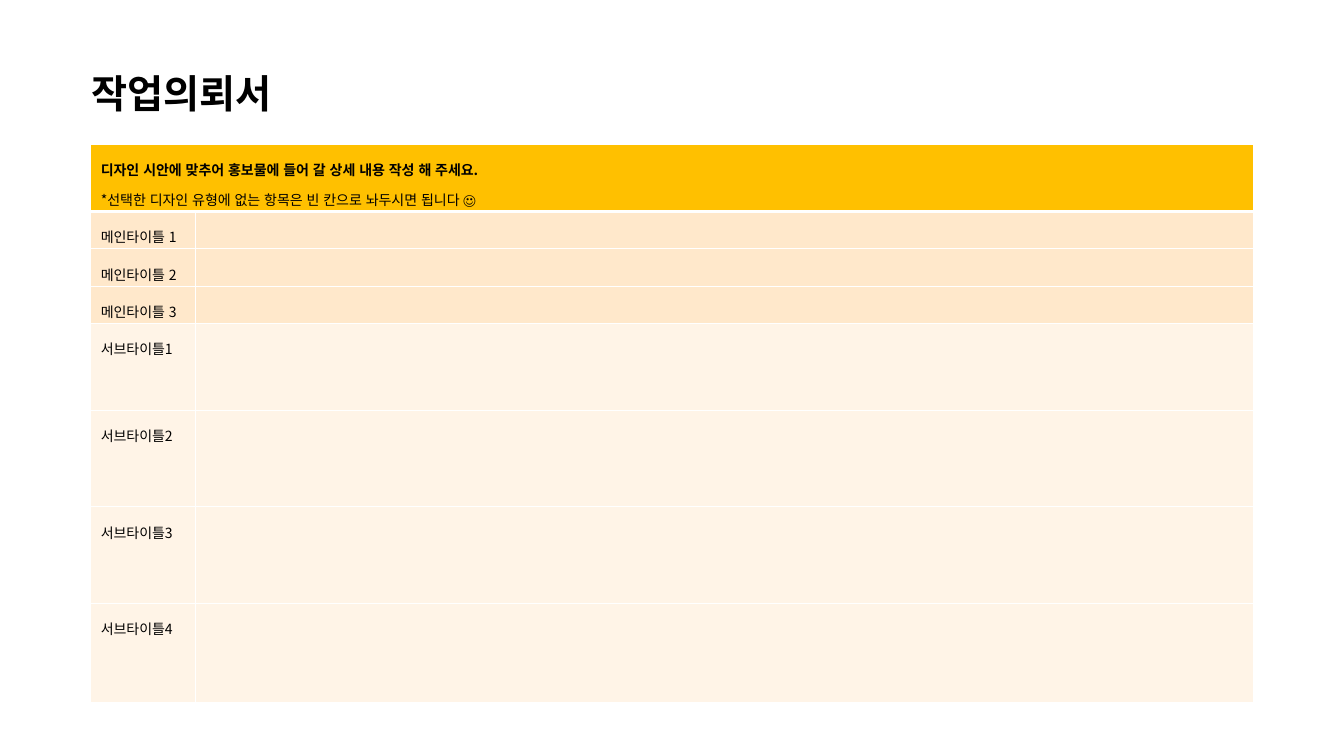
from dataclasses import dataclass

from lxml.etree import SubElement
from pptx import Presentation
from pptx.dml.color import RGBColor
from pptx.enum.lang import MSO_LANGUAGE_ID
from pptx.enum.text import MSO_ANCHOR, MSO_AUTO_SIZE, PP_ALIGN
from pptx.oxml.ns import qn
from pptx.util import Inches, Pt


@dataclass(frozen=True)
class Theme:
    font: str = "Noto Sans CJK KR"
    text: str = "000000"
    border: str = "FFFFFF"
    header: str = "FFC000"
    main_title: str = "FFE8CB"
    subtitle: str = "FFF4E7"
    title_size: float = 28
    body_size: float = 10
    line_spacing: float = 1.5
    thin: float = 1
    thick: float = 3


THEME = Theme()
COLUMN_WIDTHS = (1.04, 10.49)
HEADER_HEIGHT = 0.67
HEADER_LINES = (
    ("디자인 시안에 맞추어 홍보물에 들어 갈 상세 내용 작성 해 주세요.", True),
    ("*선택한 디자인 유형에 없는 항목은 빈 칸으로 놔두시면 됩니다 ☺", False),
)
FIELDS = [(f"메인타이틀 {number}", 0.37, THEME.main_title) for number in (1, 2, 3)]
FIELDS += [
    (f"서브타이틀{number}", height, THEME.subtitle)
    for number, height in enumerate((0.86, 0.96, 0.96, 0.98), start=1)
]


def add_run(paragraph, text, size, bold=False):
    run = paragraph.add_run()
    run.text = text
    font = run.font
    font.size = Pt(size)
    font.bold = bold
    font.color.rgb = RGBColor.from_string(THEME.text)
    font.name = THEME.font
    font.language_id = MSO_LANGUAGE_ID.KOREAN
    SubElement(run._r.get_or_add_rPr(), qn("a:ea"), typeface=THEME.font)


def add_title(slide, text):
    title = slide.shapes.title
    title.left, title.top = Inches(0.81), Inches(0.64)
    title.width, title.height = Inches(2.17), Inches(0.57)
    frame = title.text_frame
    frame.word_wrap = False
    frame.auto_size = MSO_AUTO_SIZE.SHAPE_TO_FIT_TEXT
    frame.vertical_anchor = MSO_ANCHOR.TOP
    paragraph = frame.paragraphs[0]
    paragraph.alignment = PP_ALIGN.LEFT
    add_run(paragraph, text, THEME.title_size, bold=True)


def set_borders(cell, top, bottom):
    """Draw all four cell edges; top and bottom are widths in points."""
    properties = cell._tc.get_or_add_tcPr()
    widths = {"L": THEME.thin, "R": THEME.thin, "T": top, "B": bottom}
    for side, width in widths.items():
        line = SubElement(properties, qn(f"a:ln{side}"), w=str(Pt(width)))
        fill = SubElement(line, qn("a:solidFill"))
        SubElement(fill, qn("a:srgbClr"), val=THEME.border)


def format_cell(cell, color, top=THEME.thin, bottom=THEME.thin):
    set_borders(cell, top, bottom)
    cell.fill.solid()
    cell.fill.fore_color.rgb = RGBColor.from_string(color)
    cell.margin_bottom = Inches(0.01)


def write_cell(cell, lines):
    frame = cell.text_frame
    for index, (text, bold) in enumerate(lines):
        paragraph = frame.add_paragraph() if index else frame.paragraphs[0]
        paragraph.line_spacing = THEME.line_spacing
        add_run(paragraph, text, THEME.body_size, bold)


def size_empty_cell(cell):
    """Keep the default text size from stretching a blank row."""
    paragraph = cell.text_frame.paragraphs[0]
    size = str(int(THEME.body_size * 100))
    SubElement(paragraph._p, qn("a:endParaRPr"), lang="ko-KR", sz=size)


def add_request_table(slide):
    heights = [HEADER_HEIGHT] + [height for _, height, _ in FIELDS]
    table = slide.shapes.add_table(
        len(heights), len(COLUMN_WIDTHS), Inches(0.9), Inches(1.43),
        Inches(sum(COLUMN_WIDTHS)), Inches(sum(heights)),
    ).table
    for column, width in zip(table.columns, COLUMN_WIDTHS):
        column.width = Inches(width)
    for row, height in zip(table.rows, heights):
        row.height = Inches(height)

    header = table.cell(0, 0)
    header.merge(table.cell(0, 1))
    for cell in table.rows[0].cells:
        format_cell(cell, THEME.header, bottom=THEME.thick)
    write_cell(header, HEADER_LINES)
    size_empty_cell(table.cell(0, 1))

    for row, (label, _, color) in enumerate(FIELDS, start=1):
        label_cell, entry_cell = table.cell(row, 0), table.cell(row, 1)
        for cell in (label_cell, entry_cell):
            format_cell(cell, color, top=THEME.thick if row == 1 else THEME.thin)
        write_cell(label_cell, [(label, False)])
        size_empty_cell(entry_cell)


def main():
    presentation = Presentation()
    presentation.slide_width = Inches(13.33)
    presentation.slide_height = Inches(7.5)
    slide = presentation.slides.add_slide(presentation.slide_layouts[5])
    add_title(slide, "작업의뢰서")
    add_request_table(slide)
    presentation.save("out.pptx")


if __name__ == "__main__":
    main()
